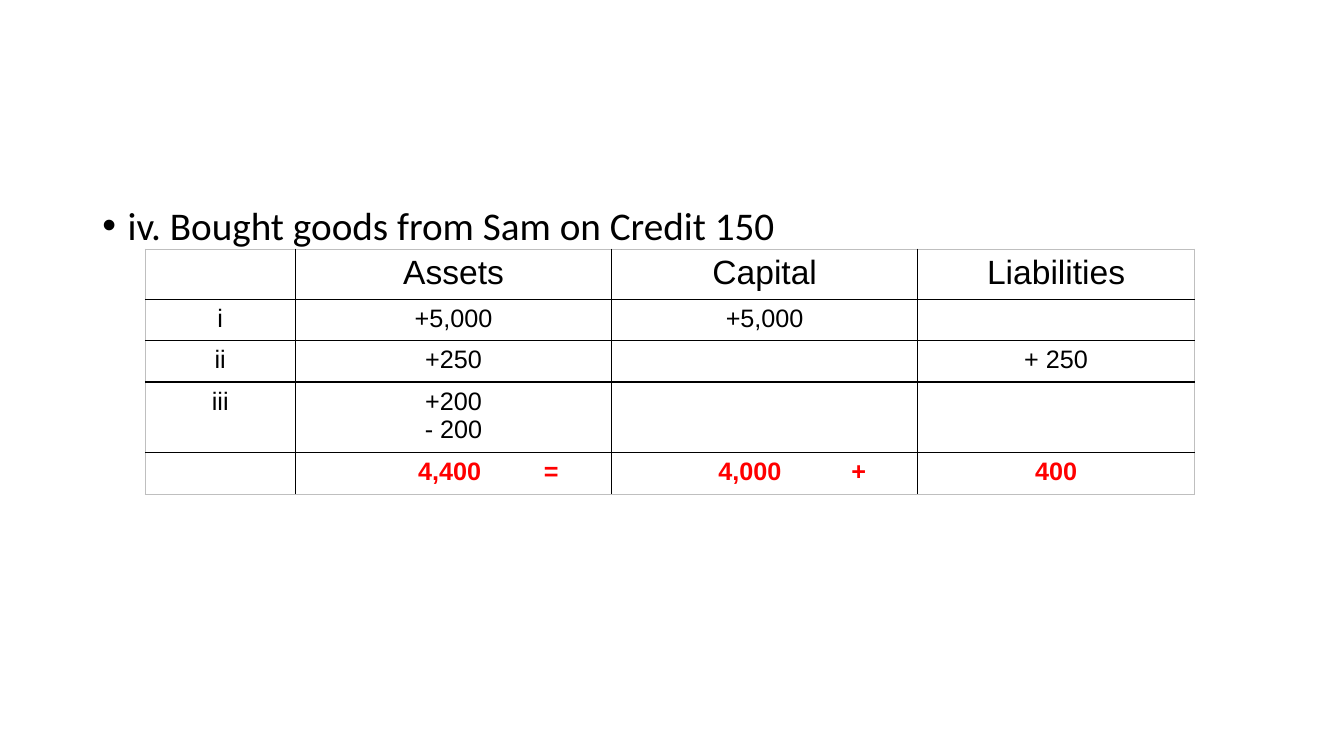
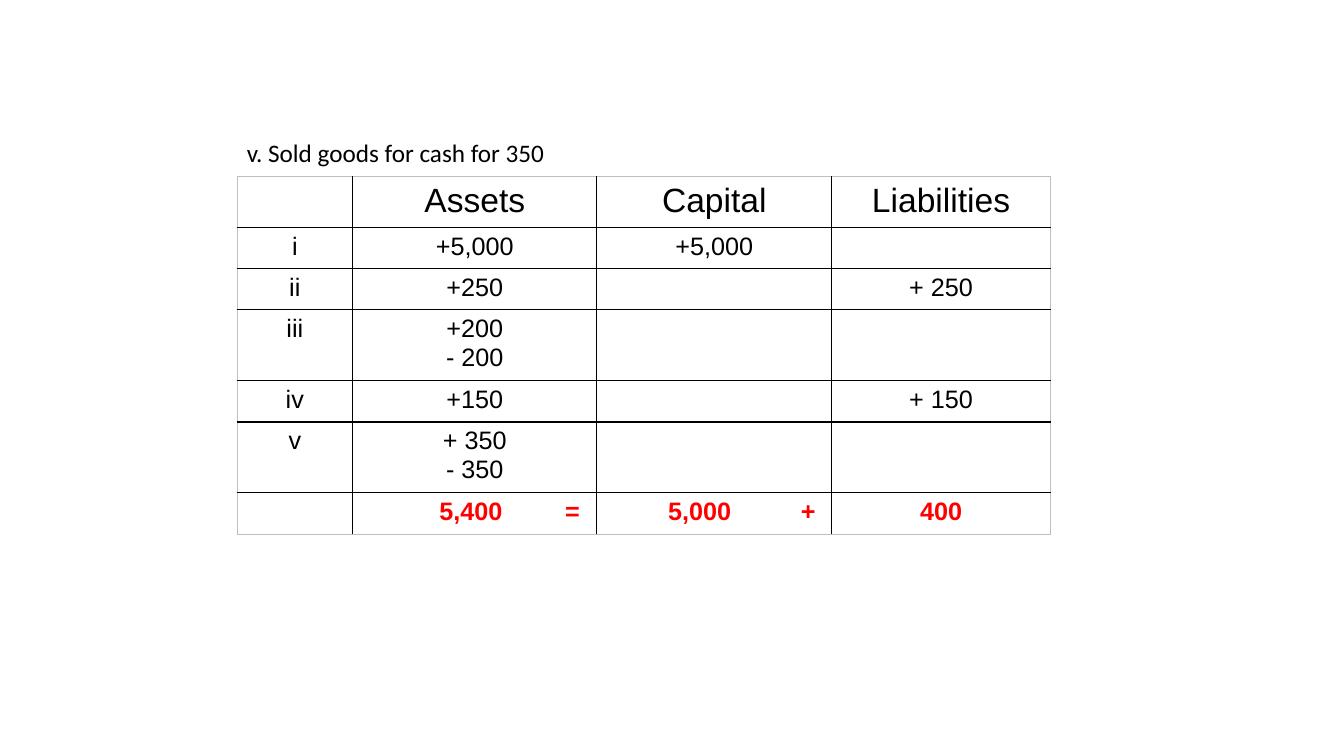
from dataclasses import dataclass

from lxml import etree
from pptx import Presentation
from pptx.dml.color import RGBColor
from pptx.enum import text
from pptx.oxml import ns
from pptx.util import Cm, Pt


@dataclass(frozen=True)
class Theme:
    ink: str = "000000"
    total: str = "FF0000"
    edge: str = "BFBFBF"
    caption_font: str = "Calibri"
    table_font: str = "Arial"
    bullet_size: int = 28
    header_size: int = 24
    body_size: int = 18
    grid_width: float = 1
    edge_width: float = 0.5
    inset_x: float = 0.25
    inset_y: float = 0.13


THEME = Theme()
CENTER, LEFT = text.PP_ALIGN.CENTER, text.PP_ALIGN.LEFT

HEADER = ("", "Assets", "Capital", "Liabilities")
ENTRIES = [
    ("i", "+5,000", "+5,000", ""),
    ("ii", "+250", "", "+ 250"),
    ("iii", "+200\n- 200", "", ""),
    ("iv", "+150", "", "+ 150"),
    ("v", "+ 350\n- 350", "", ""),
]
# Centres of the amount and the sign, in cm from the middle of their column
TOTAL_OFFSETS = {1: (-0.1, 2.46), 2: (-0.37, 2.37)}


def add_xml(parent, tag, **attributes):
    values = {key: str(value) for key, value in attributes.items()}
    return etree.SubElement(parent, ns.qn(tag), values)


def write(frame, content, *, font, size, color=THEME.ink, bold=False,
          align=LEFT, spacing=None, bullet=None, tabs=()):
    """Fill a text frame, one paragraph a line; tabs are centred stops in cm."""
    for index, line in enumerate(content.split("\n")):
        paragraph = frame.paragraphs[0] if index == 0 else frame.add_paragraph()
        paragraph.alignment = align
        if spacing:
            paragraph.line_spacing = spacing
        properties = paragraph._p.get_or_add_pPr()
        if bullet:
            properties.set("marL", str(Cm(0.64)))
            properties.set("indent", str(-Cm(0.64)))
            add_xml(properties, "a:buFont", typeface="Arial")
            add_xml(properties, "a:buChar", char=bullet)
        if tabs:
            stops = add_xml(properties, "a:tabLst")
            for stop in tabs:
                add_xml(stops, "a:tab", pos=Cm(stop), algn="ctr")
        run = paragraph.add_run()
        run.text = line
        run.font.name = font
        run.font.size = Pt(size)
        run.font.bold = bold
        run.font.color.rgb = RGBColor.from_string(color)


def add_caption(slide, box, content, **style):
    frame = slide.shapes.add_textbox(*map(Cm, box)).text_frame
    frame.word_wrap = True
    write(frame, content, font=THEME.caption_font, **style)


def draw_borders(cell, outer):
    """Draw grid lines, lighter on the sides named in outer."""
    properties = cell._tc.get_or_add_tcPr()
    for side in "LRTB":
        is_edge = side in outer
        width = THEME.edge_width if is_edge else THEME.grid_width
        line = add_xml(properties, f"a:ln{side}", w=Pt(width))
        fill = add_xml(line, "a:solidFill")
        add_xml(fill, "a:srgbClr", val=THEME.edge if is_edge else THEME.ink)
    cell.fill.background()


def outer_sides(row, column, row_count, column_count):
    edges = {"L": column == 0, "R": column == column_count - 1,
             "T": row == 0, "B": row == row_count - 1}
    return {side for side, is_edge in edges.items() if is_edge}


def add_equation_table(slide, left, top, widths, heights, entries, totals):
    """Heights are those of the header, a one-line row and a two-line row."""
    rows = [HEADER, *entries, totals]
    last = len(rows) - 1
    header_height, single, double = heights
    row_heights = [header_height] + [
        double if any("\n" in value for value in row) else single
        for row in rows[1:]]
    table = slide.shapes.add_table(
        len(rows), len(widths), Cm(left), Cm(top),
        Cm(sum(widths)), Cm(sum(row_heights))).table
    table.first_row = table.horz_banding = False
    for column, width in zip(table.columns, widths):
        column.width = Cm(width)

    for r, values in enumerate(rows):
        table.rows[r].height = Cm(row_heights[r])
        for c, value in enumerate(values):
            cell = table.cell(r, c)
            cell.margin_left = cell.margin_right = Cm(THEME.inset_x)
            cell.margin_top = cell.margin_bottom = Cm(THEME.inset_y)
            draw_borders(cell, outer_sides(r, c, len(rows), len(widths)))
            middle = widths[c] / 2 - THEME.inset_x
            tabs = [middle + offset for offset in TOTAL_OFFSETS.get(c, ())
                    if r == last]
            write(cell.text_frame, value, font=THEME.table_font,
                  size=THEME.header_size if r == 0 else THEME.body_size,
                  color=THEME.total if r == last else THEME.ink,
                  bold=r == last, align=LEFT if tabs else CENTER, tabs=tabs)


def build_credit_purchase(slide):
    add_caption(slide, (2.33, 5.08, 29.21, 12.09),
                "iv. Bought goods from Sam on Credit 150",
                size=THEME.bullet_size, spacing=0.9, bullet="•")
    add_equation_table(slide, 3.66, 6.27, (3.78, 7.98, 7.7, 6.99),
                       (1.2, 1.04, 1.7), ENTRIES[:3],
                       ("", "\t4,400\t=", "\t4,000\t+", "400"))


def build_cash_sale(slide):
    add_equation_table(slide, 5.97, 4.45, (2.92, 6.15, 5.92, 5.51),
                       (1.27, 1.04, 1.78), ENTRIES,
                       ("", "\t5,400\t=", "\t5,000\t+", "400"))
    add_caption(slide, (5.97, 3.33, 17.02, 1.02),
                "v. Sold goods for cash for 350", size=THEME.body_size)


def main():
    deck = Presentation()
    deck.slide_width, deck.slide_height = Cm(33.87), Cm(19.05)
    for build in (build_credit_purchase, build_cash_sale):
        build(deck.slides.add_slide(deck.slide_layouts[6]))
    deck.save("out.pptx")


if __name__ == "__main__":
    main()
